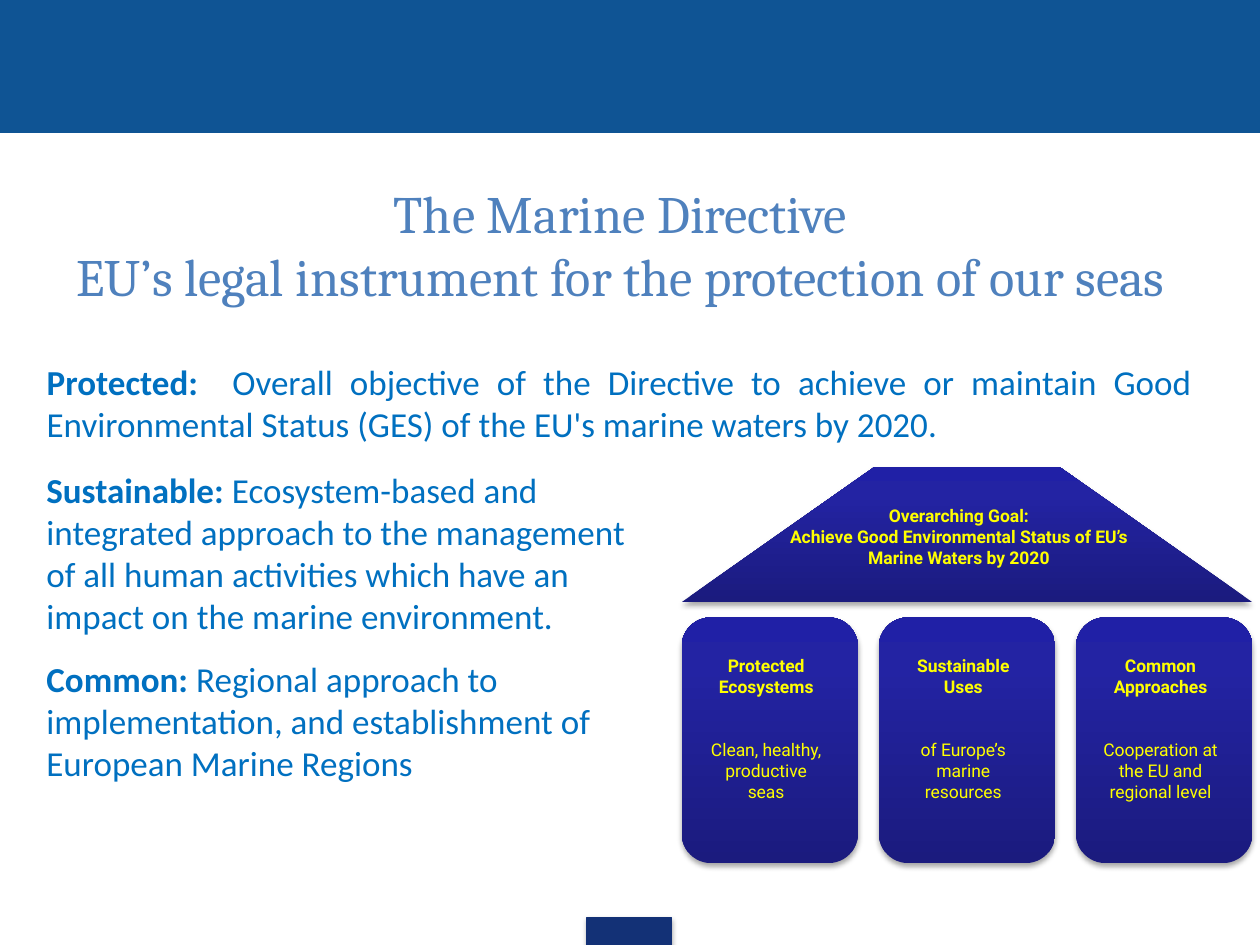
from copy import deepcopy

from lxml import etree
from pptx import Presentation
from pptx.dml.color import RGBColor
from pptx.enum import shapes, text
from pptx.oxml.ns import qn
from pptx.util import Inches, Pt

COLS, ROWS = 100, 75
BLUE, NAVY, TITLE, BODY, YELLOW = "0F5494", "133176", "4F81BD", "0070C0", "FFFF00"
GRADIENT = [(0, "1B1B7E"), (0.8, "2323A3"), (1, "2020A6")]
LEFT, CENTER, JUSTIFY = text.PP_ALIGN.LEFT, text.PP_ALIGN.CENTER, text.PP_ALIGN.JUSTIFY


def color(value):
    return RGBColor.from_string(value)


class Deck:
    def __init__(self):
        self.prs = Presentation()
        self.prs.slide_width, self.prs.slide_height = Inches(10), Inches(7.5)
        self.slide = self.prs.slides.add_slide(self.prs.slide_layouts[1])

    def box(self, col, row, width, height):
        """Turn grid columns and rows into slide lengths."""
        w, h = self.prs.slide_width / COLS, self.prs.slide_height / ROWS
        return int(col * w), int(row * h), int(width * w), int(height * h)

    def place(self, sp, at):
        sp.left, sp.top, sp.width, sp.height = self.box(*at)

    def shape(self, kind, at, fill=None, shadow=True):
        """Plain shape with a solid fill, or the navy gradient if none is given."""
        sp = self.slide.shapes.add_shape(kind, *self.box(*at))
        if fill:
            sp.fill.solid()
            sp.fill.fore_color.rgb = color(fill)
            sp.line.color.rgb = color(fill)
            sp.line.width = Pt(0.75)
        else:
            self.gradient(sp)
            sp.line.fill.background()
        sp.shadow.inherit = False
        if shadow:
            self.shadow(sp)
        return sp

    def gradient(self, sp):
        sp.fill.gradient()
        sp.fill.gradient_angle = 90
        stops = sp._element.spPr.find(".//" + qn("a:gsLst"))
        stops.append(deepcopy(stops[-1]))
        for stop, (position, value) in zip(sp.fill.gradient_stops, GRADIENT):
            stop.position = position
            stop.color.rgb = color(value)

    def shadow(self, sp):
        effects = sp._element.spPr.find(qn("a:effectLst"))
        outer = etree.SubElement(effects, qn("a:outerShdw"), blurRad=str(Pt(3.1)),
                                 dist=str(Pt(1.8)), dir="5400000", rotWithShape="0")
        black = etree.SubElement(outer, qn("a:srgbClr"), val="000000")
        etree.SubElement(black, qn("a:alpha"), val="35000")

    def style(self, r, font, size, fill, bold=False):
        r.font.name, r.font.size, r.font.bold = font, Pt(size), bold
        r.font.color.rgb = color(fill)

    def title(self, at, words):
        sp = self.slide.shapes.title
        self.place(sp, at)
        tf = sp.text_frame
        tf.text = words
        tf.vertical_anchor = text.MSO_ANCHOR.BOTTOM
        tf.auto_size = text.MSO_AUTO_SIZE.NONE
        p = tf.paragraphs[0]
        p.alignment = CENTER
        for r in p.runs:
            self.style(r, "Cambria", 30, TITLE)

    def lead(self, tf, heading, words, align):
        """Bold heading followed by regular text in one paragraph."""
        tf.word_wrap = True
        p = tf.paragraphs[0]
        p.alignment = align
        p.space_before = Pt(0)
        for part, bold in ((heading, True), (words, False)):
            r = p.add_run()
            r.text = part
            self.style(r, "Calibri", 20, BODY, bold)
        return p

    def body(self, at, heading, words):
        sp = self.slide.placeholders[1]
        self.place(sp, at)
        sp.text_frame.auto_size = text.MSO_AUTO_SIZE.NONE
        p = self.lead(sp.text_frame, heading, words, JUSTIFY)
        props = p._p.get_or_add_pPr()
        props.set("marL", "0")
        props.set("indent", "0")
        etree.SubElement(props, qn("a:buNone"))

    def textbox(self, at):
        sp = self.slide.shapes.add_textbox(*self.box(*at))
        sp.text_frame.word_wrap = True
        return sp.text_frame

    def label(self, at, lines):
        """Small centred paragraphs, each given as (words, bold, space before)."""
        tf = self.textbox(at)
        tf.text = "\n".join(words for words, _, _ in lines)
        for p, (_, bold, gap) in zip(tf.paragraphs, lines):
            p.alignment = CENTER
            p.space_before = Pt(gap)
            for r in p.runs:
                self.style(r, "Roboto", 10, YELLOW, bold)


def main():
    deck = Deck()
    kinds = shapes.MSO_SHAPE

    # Header band and footer tab
    deck.shape(kinds.RECTANGLE, (0, 0, COLS, 10.5), BLUE, shadow=False)
    deck.shape(kinds.RECTANGLE, (46.6, 72.8, 6.7, 2.2), NAVY)

    # Title and the three principles
    deck.title((2, 14.7, 94.5, 10.2), "The Marine Directive\v"
               "EU’s legal instrument for the protection of our seas")
    deck.body((2.7, 28.1, 92.9, 7.9), "Protected:",
              "  Overall objective of the Directive to achieve or maintain Good "
              "Environmental Status (GES) of the EU's marine waters by 2020.")
    deck.lead(deck.textbox((2.7, 36.7, 50.4, 14.3)), "Sustainable: ",
              "Ecosystem-based and integrated approach to the management of all "
              "human activities which have an impact on the marine environment.", LEFT)
    deck.lead(deck.textbox((2.7, 51.7, 49.6, 14)), "Common: ",
              "Regional approach to implementation, and establishment of "
              "European Marine Regions", LEFT)

    # Temple roof
    roof = deck.shape(kinds.TRAPEZOID, (54.1, 37.1, 45.3, 10.7))
    roof.adjustments[0] = 1.426
    deck.label((61.3, 39.6, 29.6, 9.1), [
        ("Overarching Goal:", True, 0),
        ("Achieve Good Environmental Status of EU’s Marine Waters by 2020", True, 0)])

    # Temple pillars
    pillars = [
        (["Protected", "Ecosystems"], "Clean, healthy, productive seas"),
        (["Sustainable Uses"], "of Europe’s marine resources"),
        (["Common", "Approaches"], "Cooperation at the EU and regional level"),
    ]
    for i, (heading, detail) in enumerate(pillars):
        left = 54.1 + 15.65 * i
        deck.shape(kinds.ROUNDED_RECTANGLE, (left, 49, 14, 19.5))
        deck.label((left + 1.1, 51.5, 11.2, 12.8),
                   [(words, True, 0) for words in heading] + [(detail, False, 24)])

    deck.prs.save("out.pptx")


if __name__ == "__main__":
    main()
